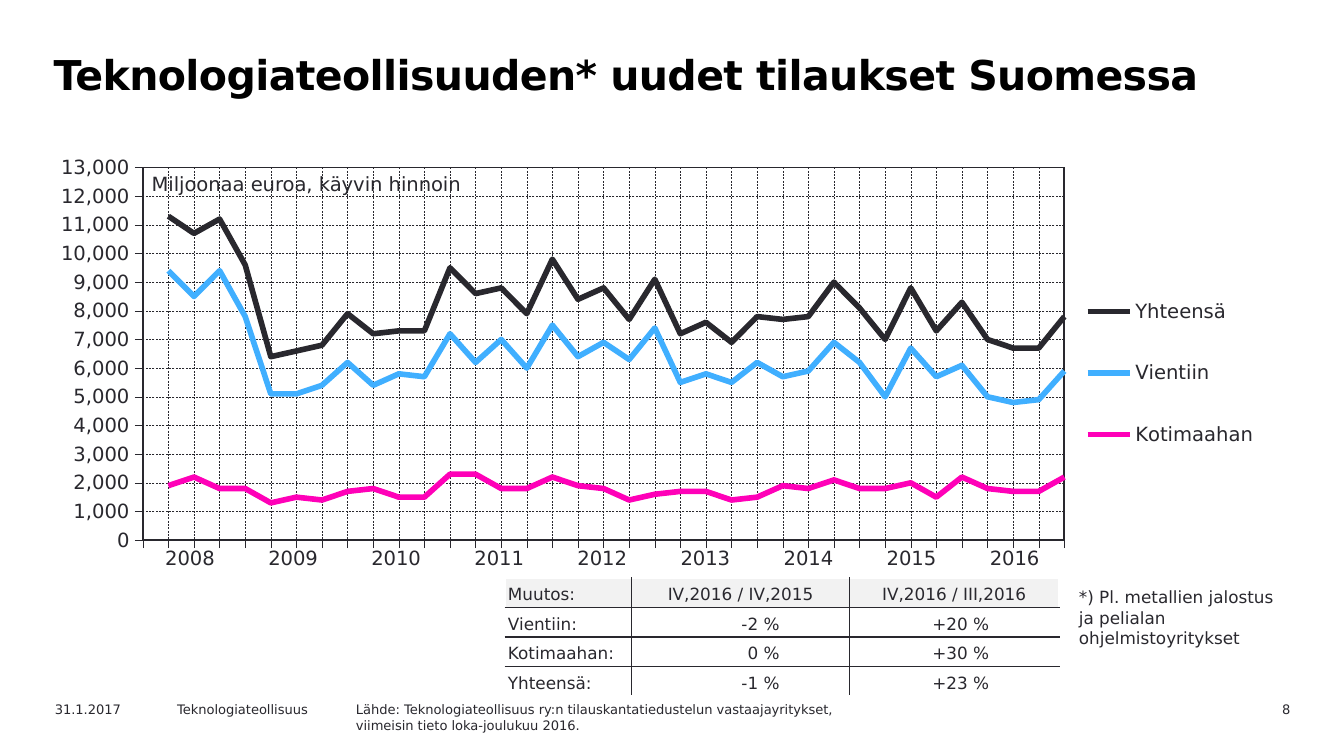
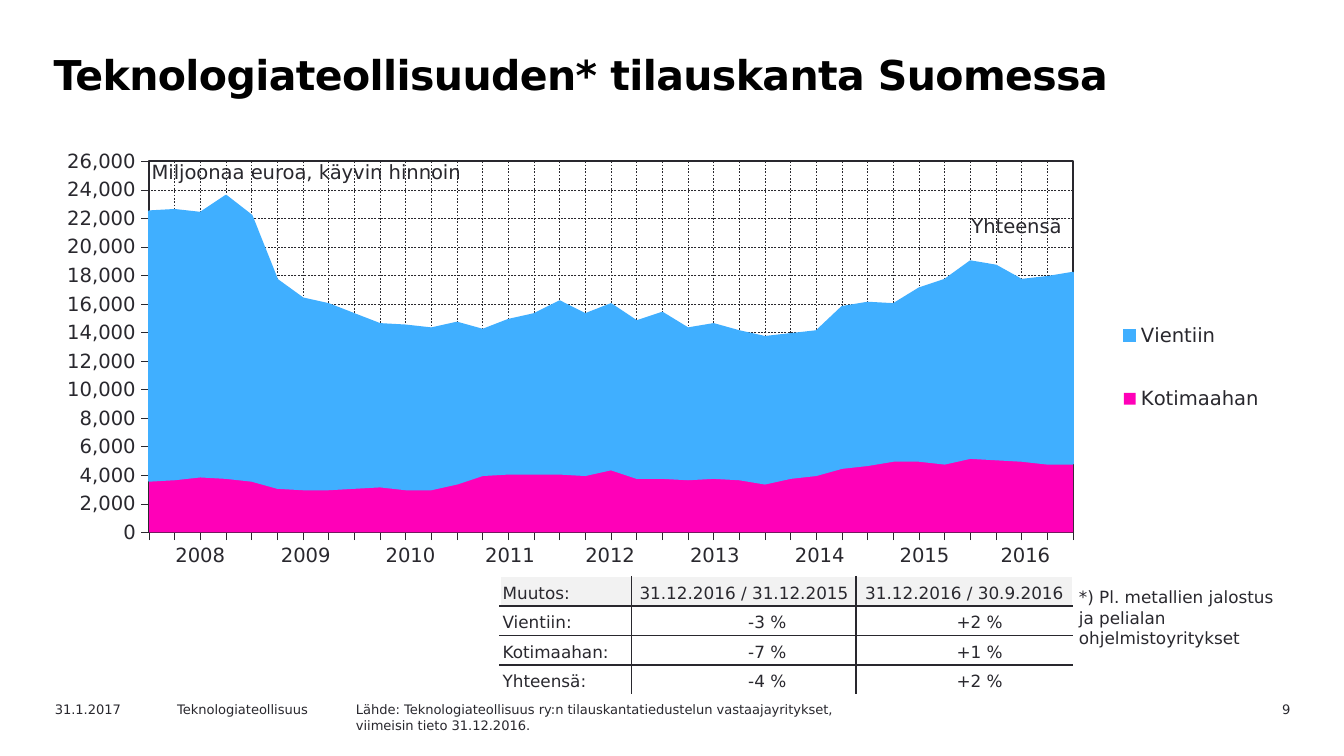
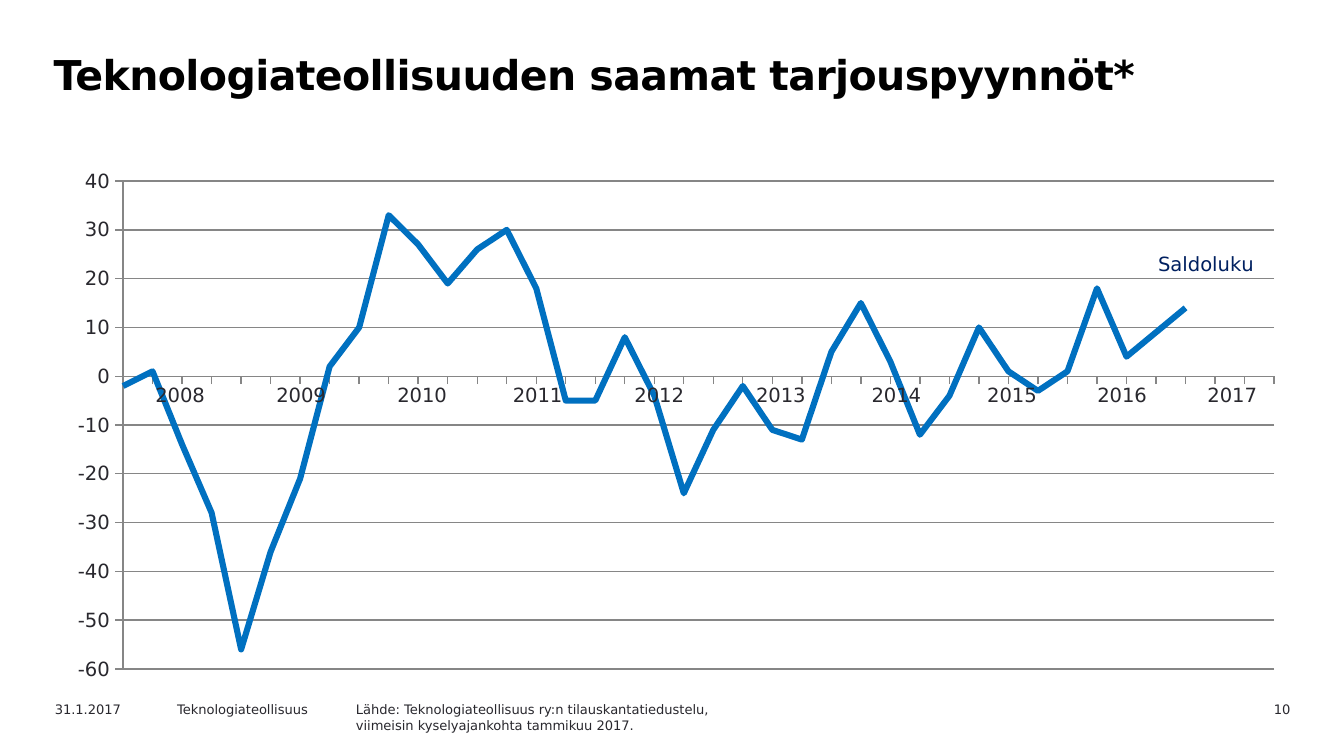
from dataclasses import dataclass
from typing import Optional

from lxml.etree import SubElement
from pptx import Presentation
from pptx.chart.data import CategoryChartData
from pptx.dml.color import RGBColor
from pptx.enum.chart import XL_CHART_TYPE, XL_LEGEND_POSITION, XL_TICK_LABEL_POSITION, XL_TICK_MARK
from pptx.enum.dml import MSO_LINE
from pptx.enum.text import MSO_ANCHOR, PP_ALIGN
from pptx.oxml import parse_xml
from pptx.oxml.ns import nsdecls, qn
from pptx.util import Inches, Pt

COLUMNS = 100  # grid columns across the slide; rows are as tall as columns are wide
ROWS = 56.25
CELL = Inches(10) / COLUMNS
FONT = "DejaVu Sans"
COLORS = {
    "title": "000000",
    "ink": "29282E",
    "paper": "FFFFFF",
    "header": "F2F2F2",
    "grid": "868686",
    "export": "40AFFF",
    "domestic": "FF00B8",
    "balance": "0070C0",
    "balance_label": "002060",
}
UNIT = "Miljoonaa euroa, käyvin hinnoin"
NOTE = "*) Pl. metallien jalostus ja pelialan ohjelmistoyritykset"
SURVEY = "Lähde: Teknologiateollisuus ry:n tilauskantatiedustelu"


@dataclass(frozen=True)
class Box:
    """A place on the slide, in grid columns and rows."""
    left: float
    top: float
    width: float
    height: float

    def emu(self) -> tuple:
        return tuple(grid(value) for value in (self.left, self.top, self.width, self.height))


@dataclass(frozen=True)
class Layout:
    """A place inside a chart, in shares of the chart's size."""
    x: float
    y: float
    w: Optional[float] = None
    h: Optional[float] = None


@dataclass(frozen=True)
class Series:
    name: str
    color: str
    values: tuple
    line: float


@dataclass(frozen=True)
class ChartSpec:
    kind: XL_CHART_TYPE
    box: Box
    plot: Layout
    series: tuple
    lowest: int
    highest: int
    step: int
    legend: Optional[Layout] = None
    title: Optional[Layout] = None
    framed: bool = True


@dataclass(frozen=True)
class TableSpec:
    left: float
    top: float
    columns: tuple
    row_height: float
    rows: tuple


@dataclass(frozen=True)
class Label:
    text: str
    box: Box
    size: float = 10.5
    wrap: bool = True


@dataclass(frozen=True)
class SlideSpec:
    title: str
    number: int
    source: tuple
    source_width: float
    chart: ChartSpec
    years: TableSpec
    changes: Optional[TableSpec] = None
    labels: tuple = ()


def grid(cells: float) -> int:
    return round(cells * CELL)


def rgb(name: str) -> RGBColor:
    return RGBColor.from_string(COLORS[name])


def style_font(font, size: float, color: str = "ink", bold: bool = False) -> None:
    font.name, font.size, font.bold = FONT, Pt(size), bold
    font.color.rgb = rgb(color)


def add_text(slide, box: Box, lines: tuple, size: float, color: str = "ink",
             bold: bool = False, align=PP_ALIGN.LEFT, wrap: bool = True):
    frame = slide.shapes.add_textbox(*box.emu()).text_frame
    frame.word_wrap = wrap
    for index, line in enumerate(lines):
        para = frame.add_paragraph() if index else frame.paragraphs[0]
        para.text = line
        para.alignment = align
        style_font(para.font, size, color, bold)
    return frame


def add_title(slide, text: str) -> None:
    para = add_text(slide, Box(2.8, 3.1, 90.2, 7.1), (text,), 22, "title", True).paragraphs[0]
    para.line_spacing = Pt(27)
    para._p.get_or_add_pPr().set("marL", str(Inches(0.02)))
    para.runs[0]._r.get_or_add_rPr().set("spc", "-30")


def add_footer(slide, spec: SlideSpec) -> None:
    top, height = 51.7, 1.8
    add_text(slide, Box(87.6, top, 9.4, height), (str(spec.number),), 7, align=PP_ALIGN.RIGHT)
    add_text(slide, Box(3.1, top, 10, height), ("31.1.2017",), 7)
    add_text(slide, Box(12.2, top, 14.2, height), ("Teknologiateollisuus",), 7)
    add_text(slide, Box(25.5, top, spec.source_width, height), spec.source, 7)


def place(parent, index: int, layout: Layout, inner: bool = False) -> None:
    """Give a chart part a manual layout as its child at the index."""
    for old in parent.findall(qn("c:layout")):
        parent.remove(old)
    element = parse_xml(f"<c:layout {nsdecls('c')}><c:manualLayout/></c:layout>")
    manual = element[0]
    settings = [("layoutTarget", "inner")] if inner else []
    settings += [("xMode", "edge"), ("yMode", "edge")]
    sizes = (("x", layout.x), ("y", layout.y), ("w", layout.w), ("h", layout.h))
    settings += [(key, str(size)) for key, size in sizes if size is not None]
    for tag, value in settings:
        SubElement(manual, qn(f"c:{tag}")).set("val", value)
    parent.insert(index, element)


def style_line(line, color: str, width: float, dash=None) -> None:
    line.color.rgb = rgb(color)
    line.width = Pt(width)
    if dash is not None:
        line.dash_style = dash


def start_on_axis(value_axis) -> None:
    """Let the first and last points lie on the plot's edges."""
    element = value_axis._element
    for old in element.findall(qn("c:crossBetween")):
        element.remove(old)
    crossing = parse_xml(f'<c:crossBetween {nsdecls("c")} val="midCat"/>')
    before = element.find(qn("c:crosses"))
    if before is None:
        before = element.find(qn("c:crossAx"))
    before.addnext(crossing)


def style_axes(chart, spec: ChartSpec) -> None:
    category, value = chart.category_axis, chart.value_axis
    for axis in (category, value):
        axis.major_tick_mark, axis.minor_tick_mark = XL_TICK_MARK.OUTSIDE, XL_TICK_MARK.NONE
        axis.has_major_gridlines = spec.framed or axis is value
        if spec.framed:
            style_line(axis.format.line, "ink", 0.22)
            style_line(axis.major_gridlines.format.line, "ink", 0.25, MSO_LINE.DASH)
        else:
            style_line(axis.format.line, "grid", 0.75)
    if not spec.framed:
        style_line(value.major_gridlines.format.line, "grid", 0.75)
    category.tick_label_position = XL_TICK_LABEL_POSITION.NONE
    value.minimum_scale, value.maximum_scale = spec.lowest, spec.highest
    value.major_unit = spec.step
    value.tick_labels.number_format = "#,##0" if spec.framed else "General"
    value.tick_labels.number_format_is_linked = False
    style_font(value.tick_labels.font, 10.5)
    start_on_axis(value)


def add_chart(slide, spec: ChartSpec) -> None:
    data = CategoryChartData()
    data.categories = [str(n + 1) for n in range(len(spec.series[0].values))]
    for item in spec.series:
        data.add_series(item.name, item.values)
    chart = slide.shapes.add_chart(spec.kind, *spec.box.emu(), data).chart
    style_font(chart.font, 10.5)
    chart.plots[0].vary_by_categories = False
    for series, item in zip(chart.plots[0].series, spec.series):
        if spec.kind == XL_CHART_TYPE.LINE:
            series.smooth = False
        else:
            series.format.fill.solid()
            series.format.fill.fore_color.rgb = rgb(item.color)
        if item.line:
            style_line(series.format.line, item.color, item.line)
    style_axes(chart, spec)

    plot_area = chart._chartSpace.chart.plotArea
    place(plot_area, 0, spec.plot, inner=True)
    if spec.framed:
        plot_area.append(parse_xml(
            f'<c:spPr {nsdecls("c", "a")}><a:noFill/><a:ln w="{Pt(1)}"><a:solidFill>'
            f'<a:srgbClr val="{COLORS["ink"]}"/></a:solidFill></a:ln></c:spPr>'))

    chart.has_legend = spec.legend is not None
    if spec.legend:
        chart.legend.position = XL_LEGEND_POSITION.RIGHT
        chart.legend.include_in_layout = False
        style_font(chart.legend.font, 10.5)
        place(chart.legend._element, 1, spec.legend)
    chart.has_title = spec.title is not None
    if spec.title:
        frame = chart.chart_title.text_frame
        frame.text = "Saldoluku"
        style_font(frame.paragraphs[0].font, 10.5, "balance_label")
        place(chart.chart_title._element, 1, spec.title)


def set_borders(cell, colors: dict) -> None:
    """Draw the cell's sides; a side without a colour gets no line."""
    properties = cell._tc.get_or_add_tcPr()
    for index, side in enumerate(("lnL", "lnR", "lnT", "lnB")):
        color = colors.get(side)
        paint = (f'<a:solidFill><a:srgbClr val="{COLORS[color]}"/></a:solidFill>'
                 if color else "<a:noFill/>")
        properties.insert(index, parse_xml(
            f'<a:{side} {nsdecls("a")} w="{Pt(1)}">{paint}</a:{side}>'))


def add_plain_table(slide, spec: TableSpec):
    box = Box(spec.left, spec.top, sum(spec.columns), spec.row_height * len(spec.rows))
    table = slide.shapes.add_table(len(spec.rows), len(spec.columns), *box.emu()).table
    table.first_row = table.horz_banding = False
    for column, width in zip(table.columns, spec.columns):
        column.width = grid(width)
    for r, row in enumerate(spec.rows):
        for c, text in enumerate(row):
            table.cell(r, c).text = text
            table.cell(r, c).fill.background()
    return table


def add_years(slide, spec: TableSpec) -> None:
    for cell in add_plain_table(slide, spec).iter_cells():
        para = cell.text_frame.paragraphs[0]
        para.alignment = PP_ALIGN.CENTER
        style_font(para.font, 10.5)
        set_borders(cell, {})


def add_changes(slide, spec: TableSpec) -> None:
    """Table with ruled inner lines and a shaded head row."""
    table = add_plain_table(slide, spec)
    last_row, last_column = len(spec.rows) - 1, len(spec.columns) - 1
    for r in range(last_row + 1):
        for c in range(last_column + 1):
            cell = table.cell(r, c)
            is_figure = r > 0 and c > 0
            cell.vertical_anchor = MSO_ANCHOR.BOTTOM
            cell.margin_left = cell.margin_top = cell.margin_bottom = grid(0.2)
            cell.margin_right = grid(5.2 if is_figure else 0.2)
            para = cell.text_frame.paragraphs[0]
            para.alignment = (PP_ALIGN.RIGHT if is_figure
                              else PP_ALIGN.CENTER if c else PP_ALIGN.LEFT)
            style_font(para.font, 9)
            if r in (0, last_row):
                cell.fill.solid()
                cell.fill.fore_color.rgb = rgb("paper" if r else "header")
            outer = {"lnL": c == 0, "lnR": c == last_column, "lnT": r == 0, "lnB": r == last_row}
            set_borders(cell, {side: "paper" if edge else "ink" for side, edge in outer.items()})


def years_table(left: float, top: float, columns: tuple, height: float) -> TableSpec:
    years = tuple(str(2008 + n) for n in range(len(columns)))
    return TableSpec(left, top, columns, height, (years,))


def changes_table(left: float, top: float, columns: tuple, periods: tuple,
                  exports: tuple, domestic: tuple, total: tuple) -> TableSpec:
    rows = (("Muutos:", *periods), ("Vientiin:", *exports),
            ("Kotimaahan:", *domestic), ("Yhteensä:", *total))
    return TableSpec(left, top, columns, 2.2, rows)


NOTE_LABEL = Label(NOTE, Box(79.3, 43.2, 16.6, 5.6), 9)

NEW_ORDERS = SlideSpec(
    "Teknologiateollisuuden* uudet tilaukset Suomessa", 8,
    (SURVEY + "n vastaajayritykset,", "viimeisin tieto loka-joulukuu 2016."), 50.7,
    ChartSpec(
        XL_CHART_TYPE.LINE, Box(3.1, 11.1, 91.8, 33.3), Layout(0.082, 0.041, 0.747, 0.833),
        (
            Series("Yhteensä", "ink", (
                None, 11300, 10700, 11200, 9600, 6400, 6600, 6800, 7900, 7200, 7300, 7300, 9500,
                8600, 8800, 7900, 9800, 8400, 8800, 7700, 9100, 7200, 7600, 6900, 7800, 7700,
                7800, 9000, 8100, 7000, 8800, 7300, 8300, 7000, 6700, 6700, 7800), 3),
            Series("Vientiin", "export", (
                None, 9400, 8500, 9400, 7800, 5100, 5100, 5400, 6200, 5400, 5800, 5700, 7200,
                6200, 7000, 6000, 7500, 6400, 6900, 6300, 7400, 5500, 5800, 5500, 6200, 5700,
                5900, 6900, 6200, 5000, 6700, 5700, 6100, 5000, 4800, 4900, 5900), 3),
            Series("Kotimaahan", "domestic", (
                None, 1900, 2200, 1800, 1800, 1300, 1500, 1400, 1700, 1800, 1500, 1500, 2300,
                2300, 1800, 1800, 2200, 1900, 1800, 1400, 1600, 1700, 1700, 1400, 1500, 1900,
                1800, 2100, 1800, 1800, 2000, 1500, 2200, 1800, 1700, 1700, 2200), 3),
        ),
        0, 13000, 1000, legend=Layout(0.84, 0.25, 0.15, 0.5)),
    years_table(10.3, 40.2, (7.67,) * 9, 3.1),
    changes_table(37.6, 43, (9.4, 16.2, 15.6), ("IV,2016 / IV,2015", "IV,2016 / III,2016"),
                  ("-2 %", "+20 %"), ("0 %", "+30 %"), ("-1 %", "+23 %")),
    (Label(UNIT, Box(10.3, 12.3, 26, 2.7), wrap=False), NOTE_LABEL),
)

ORDER_BOOK = SlideSpec(
    "Teknologiateollisuuden* tilauskanta Suomessa", 9,
    (SURVEY + "n vastaajayritykset,", "viimeisin tieto 31.12.2016."), 50,
    ChartSpec(
        XL_CHART_TYPE.AREA_STACKED, Box(4.2, 11.1, 91.8, 31.2),
        Layout(0.075, 0.029, 0.749, 0.885),
        (
            Series("Kotimaahan", "domestic", (
                3600, 3700, 3900, 3800, 3600, 3100, 3000, 3000, 3100, 3200, 3000, 3000, 3400,
                4000, 4100, 4100, 4100, 4000, 4400, 3800, 3800, 3700, 3800, 3700, 3400, 3800,
                4000, 4500, 4700, 5000, 5000, 4800, 5200, 5100, 5000, 4800, 4800), 0),
            Series("Vientiin", "export", (
                18900, 18900, 18500, 19800, 18600, 14600, 13400, 13000, 12200, 11400, 11500,
                11300, 11300, 10200, 10800, 11200, 12100, 11300, 11600, 11000, 11600, 10600,
                10800, 10400, 10300, 10100, 10100, 11300, 11400, 11000, 12100, 12900, 13800,
                13600, 12700, 13100, 13400), 0.88),
        ),
        0, 26000, 2000, legend=Layout(0.85, 0.32, 0.14, 0.4)),
    years_table(11, 40, (7.8, 7.9, 7.7, 7.1, 7.8, 7.8, 7.8, 7.8, 7.2), 2.8),
    changes_table(37.2, 42.9, (9.8, 16.7, 16.1),
                  ("31.12.2016 / 31.12.2015", "31.12.2016 / 30.9.2016"),
                  ("-3 %", "+2 %"), ("-7 %", "+1 %"), ("-4 %", "+2 %")),
    (Label(UNIT, Box(10.3, 11.4, 26, 2.7), wrap=False), NOTE_LABEL,
     Label("Yhteensä", Box(71.3, 15.4, 10.6, 2.7))),
)

REQUESTS = SlideSpec(
    "Teknologiateollisuuden saamat tarjouspyynnöt*", 10,
    (SURVEY + ",", "viimeisin kyselyajankohta tammikuu 2017."), 32.5,
    ChartSpec(
        XL_CHART_TYPE.LINE, Box(4.2, 11.8, 91.8, 39), Layout(0.054, 0.043, 0.933, 0.931),
        (Series("Saldoluku", "balance", (
            -2, 1, -14, -28, -56, -36, -21, 2, 10, 33, 27, 19, 26, 30, 18, -5, -5, 8, -4, -24,
            -11, -2, -11, -13, 5, 15, 3, -12, -4, 10, 1, -3, 1, 18, 4, 9, 14,
            None, None, None), 3.25),),
        -60, 40, 10, title=Layout(0.89, 0.17), framed=False),
    years_table(8.9, 28.1, (9, 9, 9, 8.2, 9.9, 8.2, 9, 8.2, 8.2, 8.2), 2.9),
)


def add_slide(deck, spec: SlideSpec) -> None:
    slide = deck.slides.add_slide(deck.slide_layouts[6])
    add_title(slide, spec.title)
    add_footer(slide, spec)
    add_chart(slide, spec.chart)
    add_years(slide, spec.years)
    if spec.changes:
        add_changes(slide, spec.changes)
    for label in spec.labels:
        add_text(slide, label.box, (label.text,), label.size, wrap=label.wrap)


def main() -> None:
    deck = Presentation()
    deck.slide_width, deck.slide_height = grid(COLUMNS), grid(ROWS)
    for spec in (NEW_ORDERS, ORDER_BOOK, REQUESTS):
        add_slide(deck, spec)
    deck.save("out.pptx")


if __name__ == "__main__":
    main()
